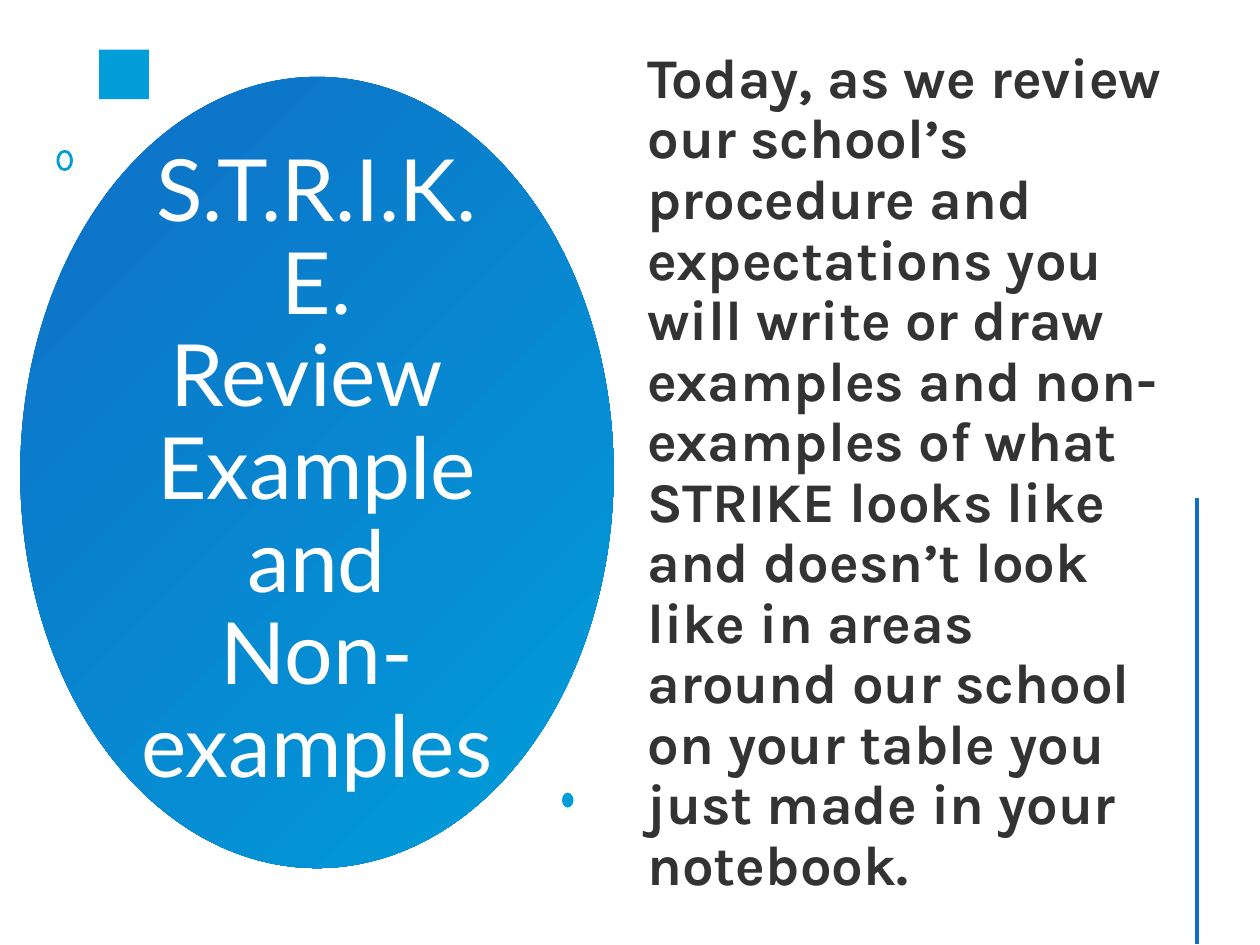
from typing import NamedTuple

from lxml.etree import SubElement
from pptx import Presentation
from pptx.dml.color import RGBColor
from pptx.enum.shapes import MSO_CONNECTOR, MSO_SHAPE as Preset
from pptx.enum.text import MSO_ANCHOR, MSO_AUTO_SIZE, PP_ALIGN
from pptx.oxml.ns import qn
from pptx.util import Cm, Pt

BLUE = RGBColor(0x0F, 0x6F, 0xC6)
CYAN = RGBColor(0x00, 0x9D, 0xD9)
WHITE = RGBColor(0xFF, 0xFF, 0xFF)
CHARCOAL = RGBColor(0x33, 0x33, 0x33)

HEADING = ("S.T.R.I.K.E. Review ", "Example and Non-examples ")
INSTRUCTIONS = (
    "Today, as we review our school’s procedure and expectations you will "
    "write or draw examples and non-examples of what STRIKE looks like and "
    "doesn’t look like in areas around our school on your table you just "
    "made in your notebook."
)


class Box(NamedTuple):
    left: float
    top: float
    width: float
    height: float

    def lengths(self) -> list:
        return [Cm(value) for value in self]


class TextStyle(NamedTuple):
    font: str
    size: float
    color: RGBColor
    bold: bool
    align: PP_ALIGN
    space_before: float


class Ornament(NamedTuple):
    preset: Preset
    box: Box


HEADING_STYLE = TextStyle("Lato", 49, WHITE, False, PP_ALIGN.CENTER, 0)
BODY_STYLE = TextStyle("Karla", 32, CHARCOAL, True, PP_ALIGN.LEFT, 7.5)
DISC = Ornament(Preset.OVAL, Box(0.41, 1.55, 11.96, 15.95))
RING = Ornament(Preset.DONUT, Box(1.14, 3.02, 0.33, 0.43))
DOT = Ornament(Preset.OVAL, Box(11.33, 15.98, 0.23, 0.3))
PLUS = Box(2.34, 1.04, 0.36, 0.48)


def fill_flat(shape, color: RGBColor) -> None:
    shape.shadow.inherit = False
    shape.fill.solid()
    shape.fill.fore_color.rgb = color
    shape.line.fill.background()


def add_ornament(shapes, ornament: Ornament):
    shape = shapes.add_shape(ornament.preset, *ornament.box.lengths())
    fill_flat(shape, CYAN)
    return shape


def add_plus(shapes, box: Box, arm_x: float, arm_y: float) -> None:
    """Draw a plus whose upright is arm_x wide and whose bar is arm_y high."""
    left, top, width, height = box
    x0, x3 = left, left + width
    y0, y3 = top, top + height
    x1, x2 = left + (width - arm_x) / 2, left + (width + arm_x) / 2
    y1, y2 = top + (height - arm_y) / 2, top + (height + arm_y) / 2
    corners = [(x1, y0), (x2, y0), (x2, y1), (x3, y1), (x3, y2), (x2, y2),
               (x2, y3), (x1, y3), (x1, y2), (x0, y2), (x0, y1), (x1, y1)]
    builder = shapes.build_freeform(*corners[0], scale=Cm(1))
    builder.add_line_segments(corners[1:], close=True)
    fill_flat(builder.convert_to_shape(), CYAN)


def write(frame, lines: tuple[str, ...], style: TextStyle) -> None:
    frame.word_wrap = True
    frame.auto_size = MSO_AUTO_SIZE.NONE
    frame.vertical_anchor = MSO_ANCHOR.MIDDLE
    paragraph = frame.paragraphs[0]
    paragraph.alignment = style.align
    paragraph.line_spacing = 0.9
    paragraph.space_before = Pt(style.space_before)
    for index, line in enumerate(lines):
        if index:
            paragraph.add_line_break()
        run = paragraph.add_run()
        run.text = line
        run.font.name = style.font
        run.font.size = Pt(style.size)
        run.font.bold = style.bold
        run.font.color.rgb = style.color


def main() -> None:
    deck = Presentation()
    deck.slide_width, deck.slide_height = Cm(25.4), Cm(19.05)
    slide = deck.slides.add_slide(deck.slide_layouts[5])
    shapes = slide.shapes

    heading = shapes.title
    heading.left, heading.top, heading.width, heading.height = Box(
        2.59, 3.58, 7.59, 11.86).lengths()
    write(heading.text_frame, HEADING, HEADING_STYLE)

    disc = add_ornament(shapes, DISC)
    disc.fill.gradient()
    disc.fill.gradient_angle = 315
    for stop, color, position in zip(disc.fill.gradient_stops, (BLUE, CYAN), (0, 1)):
        stop.color.rgb = color
        stop.position = position
    heading._element.addprevious(disc._element)  # the disc lies behind the heading

    add_plus(shapes, PLUS, arm_x=0.05, arm_y=0.07)
    ring = add_ornament(shapes, RING)
    ring.adjustments[0] = 0.17

    instructions = shapes.add_textbox(*Box(12.8, 1.45, 11.13, 16.2).lengths())
    write(instructions.text_frame, (INSTRUCTIONS,), BODY_STYLE)

    add_ornament(shapes, DOT)

    rule = shapes.add_connector(
        MSO_CONNECTOR.STRAIGHT, Cm(24.13), Cm(10.03), Cm(24.13), Cm(19.03))
    rule.line.color.rgb = BLUE
    rule.line.width = Pt(2)
    SubElement(rule._element.spPr, qn("a:effectLst"))

    deck.save("out.pptx")


if __name__ == "__main__":
    main()
